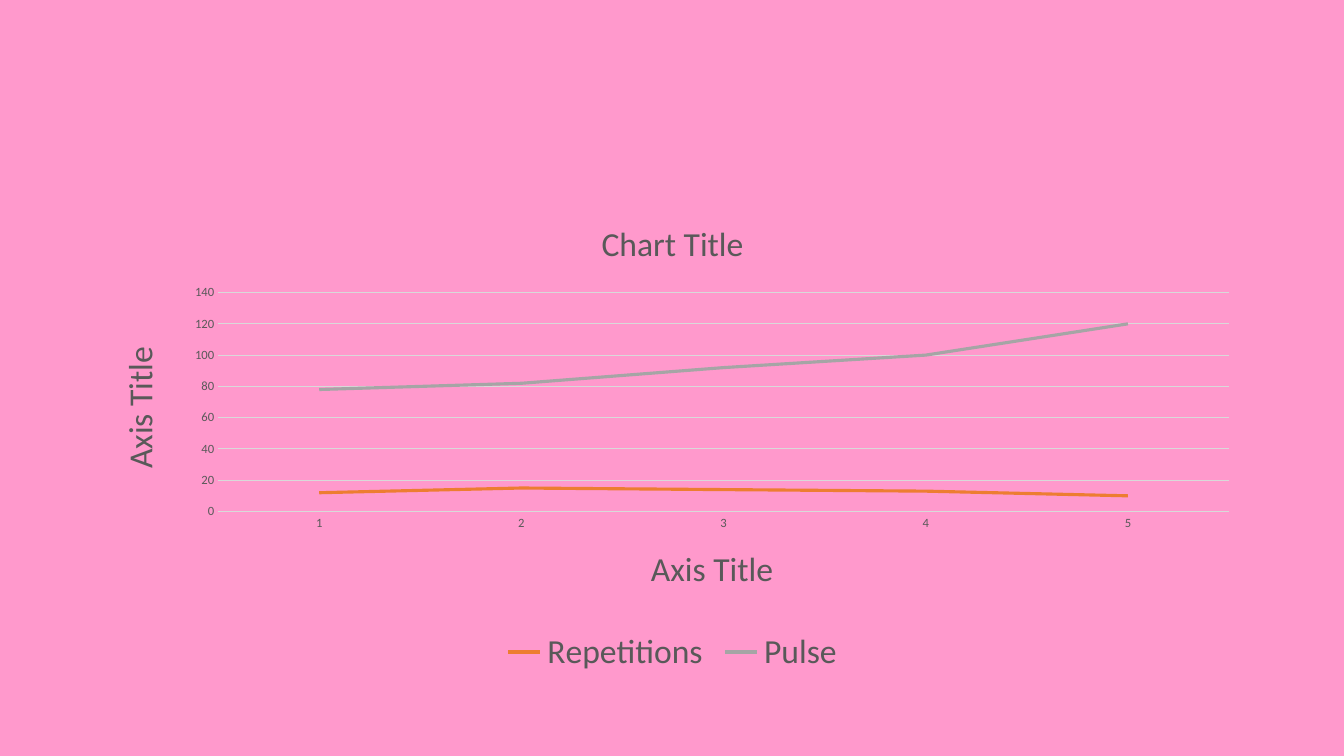
import pptx
import pptx.util
import pptx.chart.data
import pptx.dml.color
import pptx.enum.chart
from pptx.util import Inches, Pt

# Content
TITLE = "Chart Title"
AXIS = "Axis Title"
CATS = ["1", "2", "3", "4", "5"]
ROWS = [
    ("Repetitions", (12, 15, 14, 13, 10), "orange"),
    ("Pulse", (78, 82, 92, 100, 120), "silver"),
]
COLORS = {
    "back": "FF99CC",
    "text": "595959",
    "grid": "D9D9D9",
    "orange": "ED7D31",
    "silver": "A5A5A5",
}
FONT = "Calibri"


def color(name):
    return pptx.dml.color.RGBColor.from_string(COLORS[name])


def style(font, size):
    font.name = FONT
    font.size = Pt(size)
    font.bold = False
    font.color.rgb = color("text")


def stroke(line, name, width):
    line.color.rgb = color(name)
    line.width = Pt(width)


def label(owner, text):
    frame = owner.text_frame
    frame.text = text
    style(frame.paragraphs[0].font, 24)


# Slide
deck = pptx.Presentation()
deck.slide_width, deck.slide_height = Inches(13.33), Inches(7.5)
slide = deck.slides.add_slide(deck.slide_layouts[6])
slide.background.fill.solid()
slide.background.fill.fore_color.rgb = color("back")

# Chart
data = pptx.chart.data.CategoryChartData()
data.categories = CATS
for name, vals, _ in ROWS:
    data.add_series(name, vals)
chart = slide.shapes.add_chart(
    pptx.enum.chart.XL_CHART_TYPE.LINE,
    Inches(0.92), Inches(1.98), Inches(11.5), Inches(4.76), data,
).chart
style(chart.font, 10)
label(chart.chart_title, TITLE)
chart.chart_title.include_in_layout = False

# Lines
for line, (_, _, tint) in zip(chart.plots[0].series, ROWS):
    line.smooth = False
    line.marker.style = pptx.enum.chart.XL_MARKER_STYLE.NONE
    stroke(line.format.line, tint, 2.25)

# Axes
for axis in (chart.category_axis, chart.value_axis):
    label(axis.axis_title, AXIS)
    style(axis.tick_labels.font, 9)
    axis.major_tick_mark = pptx.enum.chart.XL_TICK_MARK.NONE
    axis.minor_tick_mark = pptx.enum.chart.XL_TICK_MARK.NONE
stroke(chart.category_axis.format.line, "grid", 0.75)
chart.value_axis.format.line.fill.background()
chart.value_axis.has_major_gridlines = True
stroke(chart.value_axis.major_gridlines.format.line, "grid", 0.75)

# Legend
chart.has_legend = True
chart.legend.position = pptx.enum.chart.XL_LEGEND_POSITION.BOTTOM
chart.legend.include_in_layout = False
style(chart.legend.font, 24)

deck.save("out.pptx")
